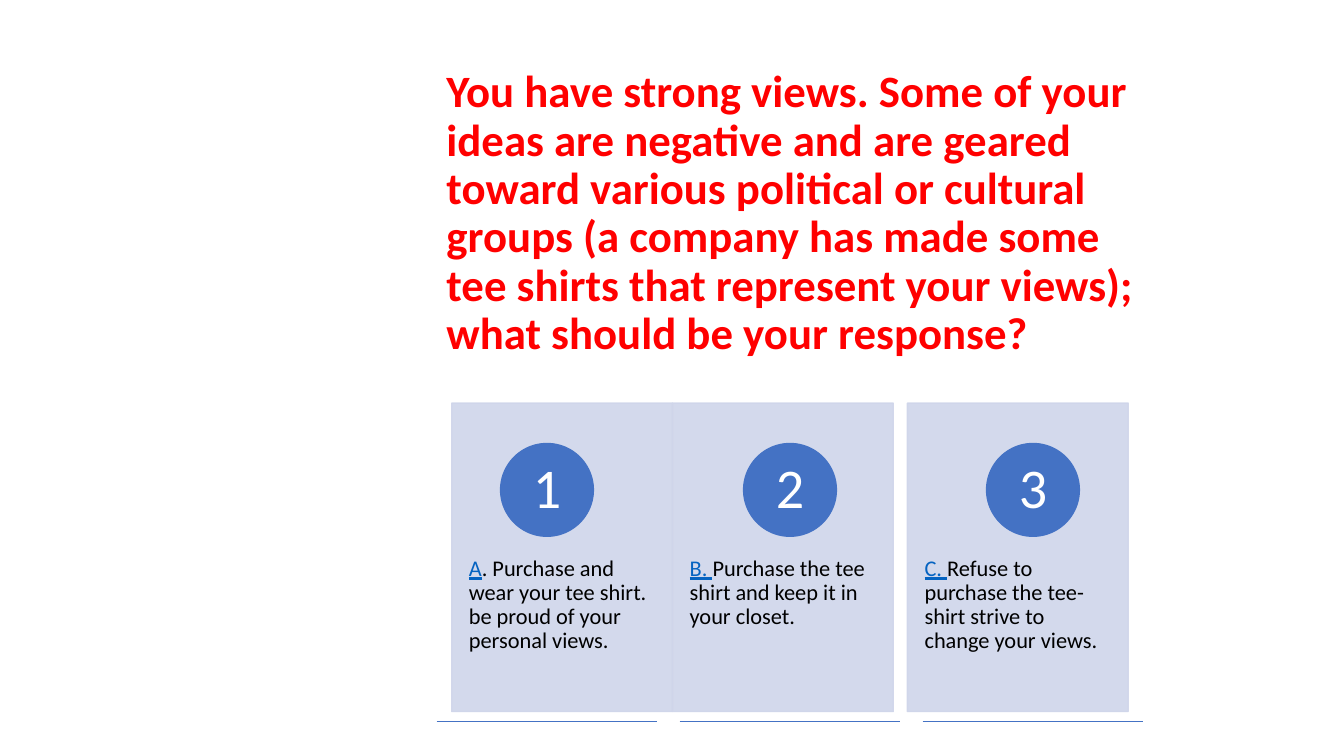
from lxml import etree
from pptx import Presentation
from pptx.dml.color import RGBColor
from pptx.enum.shapes import MSO_CONNECTOR, MSO_SHAPE
from pptx.enum.text import MSO_ANCHOR, PP_ALIGN
from pptx.oxml.ns import qn
from pptx.util import Inches, Pt

RECT, OVAL = MSO_SHAPE.RECTANGLE, MSO_SHAPE.OVAL
STRAIGHT = MSO_CONNECTOR.STRAIGHT
TOP, MIDDLE = MSO_ANCHOR.TOP, MSO_ANCHOR.MIDDLE
LEFT, CENTER = PP_ALIGN.LEFT, PP_ALIGN.CENTER

RED = RGBColor(0xFF, 0x00, 0x00)
BLUE = RGBColor(0x44, 0x72, 0xC4)
PALE = RGBColor(0xCF, 0xD5, 0xEA)
LINK = RGBColor(0x05, 0x63, 0xC1)
BLACK = RGBColor(0x00, 0x00, 0x00)
WHITE = RGBColor(0xFF, 0xFF, 0xFF)

QUESTION = ("You have strong views. Some of your ideas are negative and are "
            "geared toward various political or cultural groups (a company has "
            "made some tee shirts that represent your views); what should be "
            "your response?")

# Letter, answer, shift of the card from its column
ANSWERS = [
    ("A", ". Purchase and wear your tee shirt. be proud of your personal views.", 0.15),
    ("B. ", "Purchase the tee shirt and keep it in your closet.", -0.07),
    ("C. ", "Refuse to purchase the tee-shirt strive to change your views.", -0.15),
]

# Columns of answers, in inches
COLUMN_LEFT, COLUMN_PITCH, COLUMN_W = 4.33, 2.41, 2.19
CARD_TOP, CARD_H = 4, 3.06
CIRCLE = 0.92


def write(sp, runs, size, anchor=TOP, align=LEFT, bold=False, insets=(0.1, 0.05)):
    """Put one paragraph of (text, colour, underline) runs into a shape."""
    tf = sp.text_frame
    tf.word_wrap = True
    tf.vertical_anchor = anchor
    tf.margin_left = tf.margin_right = Inches(insets[0])
    tf.margin_top = tf.margin_bottom = Inches(insets[1])
    p = tf.paragraphs[0]
    p.alignment = align
    p.line_spacing = 0.9
    p.font.name, p.font.size, p.font.bold = "Calibri", Pt(size), bold
    for text, color, underline in runs:
        r = p.add_run()
        r.text = text
        r.font.color.rgb = color
        r.font.underline = underline


def add_filled(slide, kind, box, color, opacity=100):
    """Add a preset shape whose fill and line share one colour."""
    sp = slide.shapes.add_shape(kind, *map(Inches, box))
    sp.shadow.inherit = False
    sp.fill.solid()
    sp.fill.fore_color.rgb = color
    sp.line.color.rgb = color
    sp.line.width = Pt(1)
    if opacity < 100:
        for clr in sp._element.spPr.iter(qn("a:srgbClr")):
            etree.SubElement(clr, qn("a:alpha")).set("val", str(opacity * 1000))
    return sp


def add_question(slide, box):
    sp = slide.shapes.add_textbox(*map(Inches, box))
    write(sp, [(QUESTION, RED, False)], 32, MIDDLE, bold=True)


def add_answer(slide, box, number, letter, answer, shift):
    x, y, w, h = box
    card_x = x + shift

    # Card and its wording
    add_filled(slide, RECT, (card_x, y, w, h), PALE, 90)
    sp = slide.shapes.add_textbox(*map(Inches, (card_x, y + 0.38 * h, w, 0.6 * h)))
    write(sp, [(letter, LINK, True), (answer, BLACK, False)], 16, insets=(0.17, 0.36))

    # Numbered circle, centred on the column
    sp = add_filled(slide, OVAL, (x + (w - CIRCLE) / 2, y + 0.4, CIRCLE, CIRCLE), BLUE)
    write(sp, [(str(number), WHITE, False)], 40, MIDDLE, CENTER, insets=(0.07, 0.01))

    # Rule below the card
    rule_y = Inches(y + h + 0.1)
    rule = slide.shapes.add_connector(STRAIGHT, Inches(x), rule_y, Inches(x + w), rule_y)
    rule.line.color.rgb = BLUE
    rule.line.width = Pt(1)
    etree.SubElement(rule._element.spPr, qn("a:effectLst"))


def main():
    prs = Presentation()
    prs.slide_width, prs.slide_height = Inches(13.33), Inches(7.5)
    slide = prs.slides.add_slide(prs.slide_layouts[6])

    add_question(slide, (COLUMN_LEFT, 0.25, 7.33, 3.75))
    for i, (letter, answer, shift) in enumerate(ANSWERS):
        box = (COLUMN_LEFT + i * COLUMN_PITCH, CARD_TOP, COLUMN_W, CARD_H)
        add_answer(slide, box, i + 1, letter, answer, shift)

    prs.save("out.pptx")


if __name__ == "__main__":
    main()
